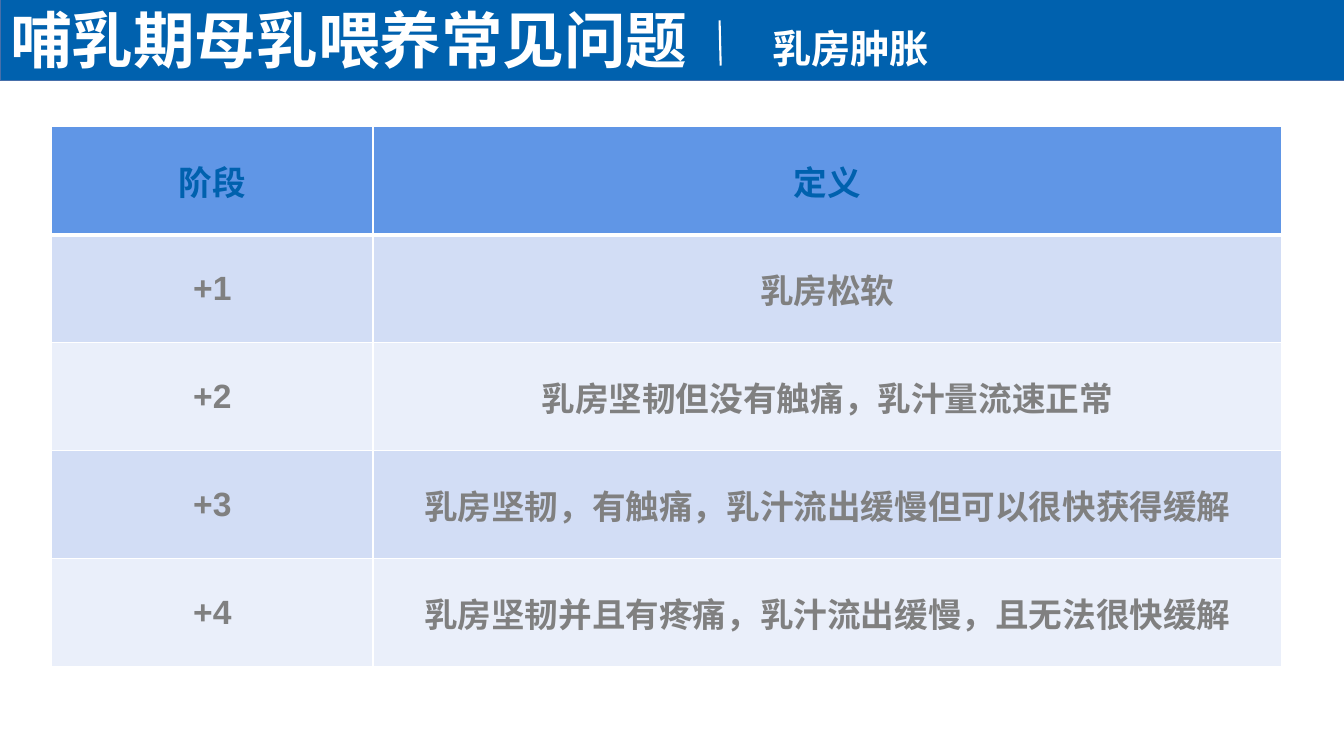
import dataclasses

import lxml.etree
import pptx
import pptx.dml.color
import pptx.enum.shapes
import pptx.enum.text
import pptx.oxml.ns
import pptx.util

Pt = pptx.util.Pt
qn = pptx.oxml.ns.qn
Align = pptx.enum.text.PP_ALIGN
Anchor = pptx.enum.text.MSO_ANCHOR


@dataclasses.dataclass(frozen=True)
class Theme:
    band: str = "0061AE"
    band_edge: str = "476FAA"
    white: str = "FFFFFF"
    header: str = "6096E6"
    stripes: tuple = ("D2DDF5", "EAEFFA")
    body_text: str = "808080"
    latin: str = "Arial"
    chinese: str = "Noto Sans CJK SC"
    title_size: int = 44
    topic_size: int = 28
    table_size: int = 24


THEME = Theme()
STAGES = [
    ("阶段", "定义"),
    ("+1", "乳房松软"),
    ("+2", "乳房坚韧但没有触痛，乳汁量流速正常"),
    ("+3", "乳房坚韧，有触痛，乳汁流出缓慢但可以很快获得缓解"),
    ("+4", "乳房坚韧并且有疼痛，乳汁流出缓慢，且无法很快缓解"),
]


def rgb(value):
    return pptx.dml.color.RGBColor.from_string(value)


def write(frame, text, size, color, align, latin):
    frame.text = text
    para = frame.paragraphs[0]
    para.alignment = align
    font = para.font
    font.size, font.bold, font.name = Pt(size), True, latin
    font.color.rgb = rgb(color)
    defaults = para._p.pPr.find(qn("a:defRPr"))
    east_asian = lxml.etree.Element(qn("a:ea"), typeface=THEME.chinese)
    defaults.find(qn("a:latin")).addnext(east_asian)
    return para


def set_borders(cell, widths):
    properties = cell._tc.get_or_add_tcPr()
    for index, (side, width) in enumerate(widths.items()):
        line = lxml.etree.Element(qn("a:ln" + side), w=str(Pt(width)))
        fill = lxml.etree.SubElement(line, qn("a:solidFill"))
        lxml.etree.SubElement(fill, qn("a:srgbClr"), val=THEME.white)
        properties.insert(index, line)


def add_heading(page, left, top, width, height):
    band = page.shapes.add_shape(
        pptx.enum.shapes.MSO_SHAPE.RECTANGLE, Pt(left), Pt(top), Pt(width), Pt(height))
    band.shadow.inherit = False
    band.fill.solid()
    band.fill.fore_color.rgb = rgb(THEME.band)
    band.line.color.rgb = rgb(THEME.band_edge)
    band.line.width = Pt(1)
    page.shapes._spTree.insert(2, band._element)

    title = page.shapes.title
    title.left, title.top = Pt(left), Pt(top + 0.5)
    title.width, title.height = Pt(502.6), Pt(55.4)
    title.text_frame.word_wrap = True
    title.text_frame.auto_size = pptx.enum.text.MSO_AUTO_SIZE.NONE
    title.text_frame.vertical_anchor = Anchor.MIDDLE
    write(title.text_frame, "哺乳期母乳喂养常见问题", THEME.title_size,
          THEME.white, Align.LEFT, THEME.chinese)

    divider = page.shapes.add_connector(
        pptx.enum.shapes.MSO_CONNECTOR.STRAIGHT,
        Pt(left + 514.8), Pt(top + 47.3), Pt(left + 514), Pt(top + 15))
    divider.line.color.rgb = rgb(THEME.white)
    divider.line.width = Pt(1.5)
    lxml.etree.SubElement(divider._element.spPr, qn("a:effectLst"))

    topic = page.shapes.add_textbox(Pt(left + 525.6), Pt(top + 0.5), Pt(164.2), Pt(height))
    topic.text_frame.word_wrap = True
    topic.text_frame.vertical_anchor = Anchor.MIDDLE
    para = write(topic.text_frame, "乳房肿胀", THEME.topic_size,
                 THEME.white, Align.CENTER, THEME.chinese)
    para.line_spacing = 1.3


def add_stage_table(page, left, top, width, height):
    table = page.shapes.add_table(
        len(STAGES), 2, Pt(left), Pt(top), Pt(width), Pt(height)).table
    stage_width = 229.4
    table.columns[0].width = Pt(stage_width)
    table.columns[1].width = Pt(width - stage_width)
    for row, texts in enumerate(STAGES):
        table.rows[row].height = Pt(height / len(STAGES))
        fill = THEME.stripes[(row - 1) % 2] if row else THEME.header
        color = THEME.body_text if row else THEME.band
        widths = {"L": 1, "R": 1, "T": 3 if row == 1 else 1, "B": 1 if row else 3}
        for column, text in enumerate(texts):
            cell = table.cell(row, column)
            cell.fill.solid()
            cell.fill.fore_color.rgb = rgb(fill)
            cell.vertical_anchor = Anchor.MIDDLE
            set_borders(cell, widths)
            write(cell.text_frame, text, THEME.table_size, color, Align.CENTER, THEME.latin)


def main():
    deck = pptx.Presentation()
    deck.slide_width, deck.slide_height = Pt(960), Pt(540)
    page = deck.slides.add_slide(deck.slide_layouts[5])
    add_heading(page, 0, -0.5, 963.4, 58)
    add_stage_table(page, 37, 90.6, 878.4, 385.5)
    deck.save("out.pptx")


if __name__ == "__main__":
    main()
